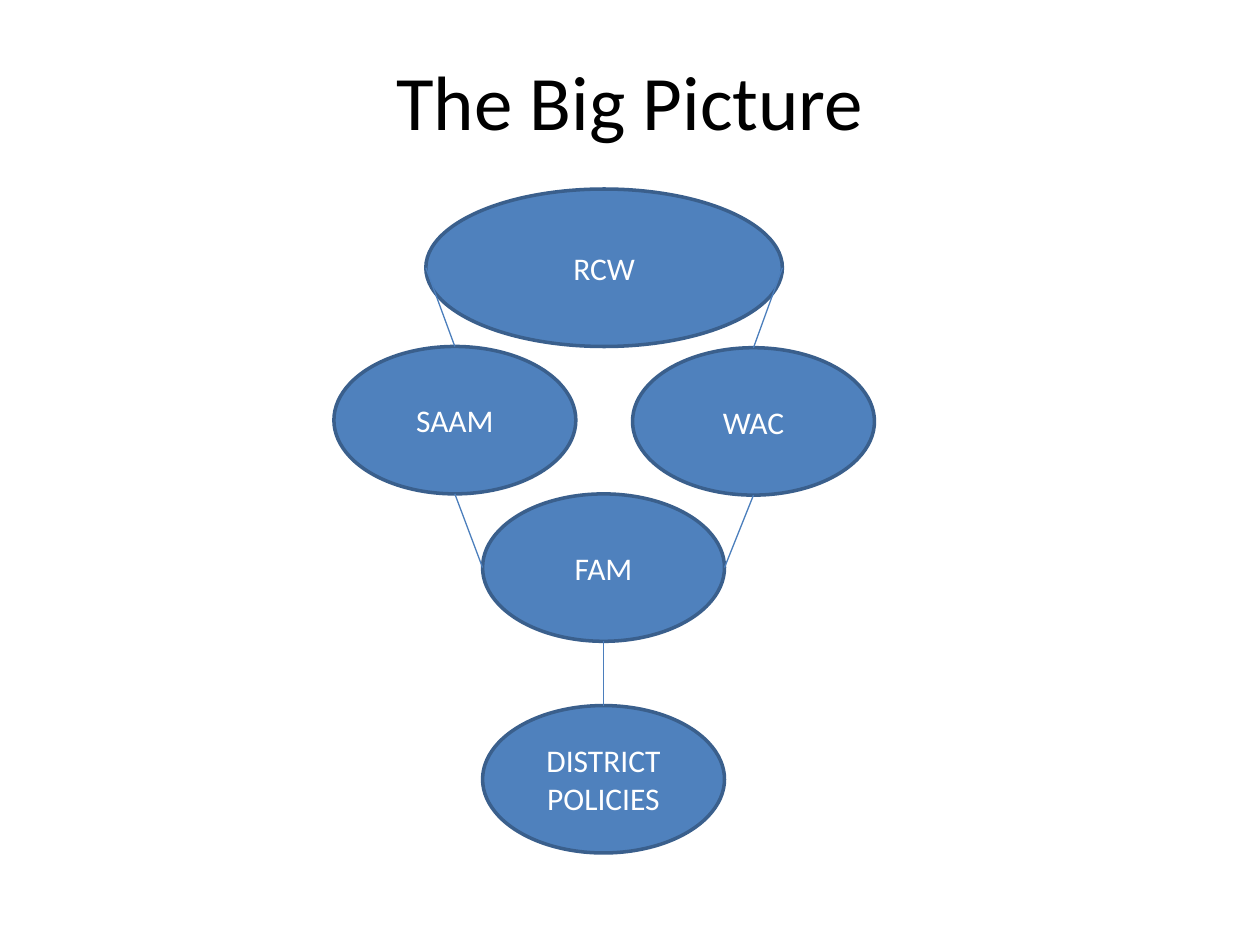
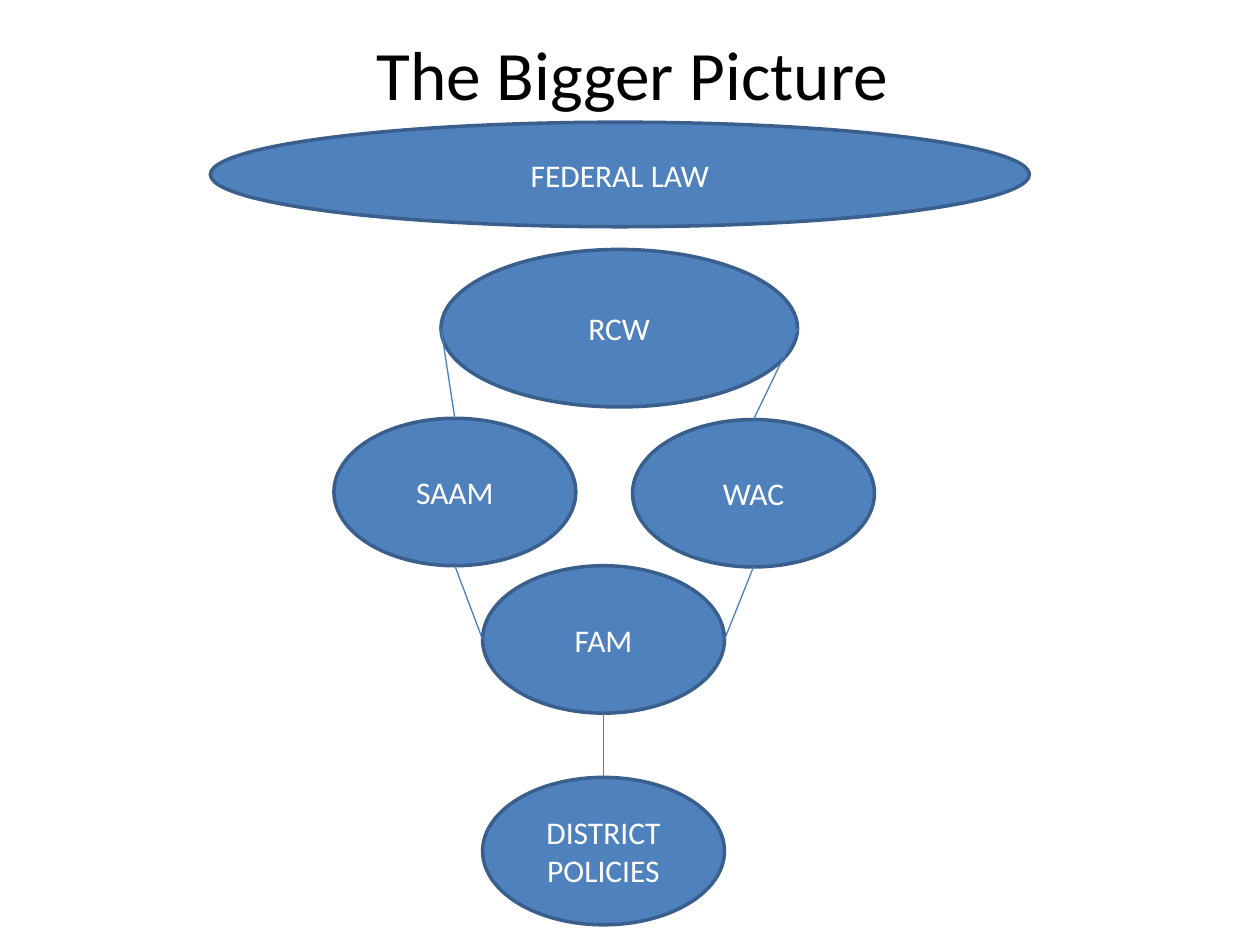
from pptx import Presentation
from pptx.dml.color import RGBColor as RGB
from pptx.enum.shapes import MSO_CONNECTOR as LINK, MSO_SHAPE as SHAPE
from pptx.enum.text import MSO_ANCHOR as ANCHOR, MSO_AUTO_SIZE as FIT, PP_ALIGN as ALIGN
from pptx.oxml.ns import qn
from pptx.util import Inches, Pt
from lxml.etree import SubElement

# Points of an oval's frame, as shares of its width and height
TOP, LEFT, FOOT, RIGHT = (0.5, 0), (0, 0.5), (0.5, 1), (1, 0.5)


def color(code):
    return RGB.from_string(code)


def write(frame, text, size=18, ink="FFFFFF", font="Calibri"):
    frame.word_wrap = True
    frame.auto_size = FIT.NONE
    frame.vertical_anchor = ANCHOR.MIDDLE
    para = frame.paragraphs[0]
    para.alignment = ALIGN.CENTER
    run = para.add_run()
    run.text = text
    run.font.name = font
    run.font.size = Pt(size)
    run.font.color.rgb = color(ink)


def spot(oval, share):
    """Return the place on the oval's frame that the share names."""
    return (oval.left + int(oval.width * share[0]),
            oval.top + int(oval.height * share[1]))


class Deck:
    fill, edge, wire, ink = "4F81BD", "3A5F8C", "4B7EBC", "000000"

    def __init__(self):
        self.show = Presentation()
        self.show.slide_width, self.show.slide_height = Inches(10), Inches(7.5)
        self.slide = None

    def page(self):
        self.slide = self.show.slides.add_slide(self.show.slide_layouts[5])

    def place(self, shape, box):
        shape.left, shape.top, shape.width, shape.height = map(Inches, box)

    def title(self, text, box, size):
        head = self.slide.shapes.title
        self.place(head, box)
        write(head.text_frame, text, size=size, ink=self.ink)

    def oval(self, text, x, y, w=1.92, h=1.17):
        oval = self.slide.shapes.add_shape(
            SHAPE.OVAL, *map(Inches, (x, y, w, h)))
        oval.shadow.inherit = False
        oval.fill.solid()
        oval.fill.fore_color.rgb = color(self.fill)
        oval.line.color.rgb = color(self.edge)
        oval.line.width = Pt(2)
        write(oval.text_frame, text)
        return oval

    def link(self, start, out, end, into):
        line = self.slide.shapes.add_connector(
            LINK.STRAIGHT, *spot(start, out), *spot(end, into))
        line.line.color.rgb = color(self.wire)
        line.line.width = Pt(0.75)
        SubElement(line._element.spPr, qn("a:effectLst"))

    def rules(self, x, y, top):
        """Draw the chain of rules: RCW at x, y and the rest from top down."""
        rcw = self.oval("RCW", x, y, 2.83, 1.25)
        saam = self.oval("SAAM", 2.65, top)
        fam = self.oval("FAM", 3.83, top + 1.17)
        local = self.oval("DISTRICT POLICIES", 3.83, top + 2.85)
        wac = self.oval("WAC", 5.02, top + 0.01)
        for side, mid in ((LEFT, saam), (RIGHT, wac)):
            self.link(rcw, side, mid, TOP)
            self.link(mid, FOOT, fam, side)
        self.link(fam, FOOT, local, TOP)


def main():
    deck = Deck()

    deck.page()
    deck.title("The Big Picture", (0.5, 0.17, 9, 1.25), 44)
    deck.rules(3.38, 1.5, 2.75)

    deck.page()
    deck.title("The Bigger Picture", (0.52, 0.22, 9, 0.71), 39.6)
    deck.rules(3.5, 1.98, 3.32)
    deck.oval("FEDERAL LAW", 1.67, 0.97, 6.5, 0.83)

    deck.show.save("out.pptx")


if __name__ == "__main__":
    main()
